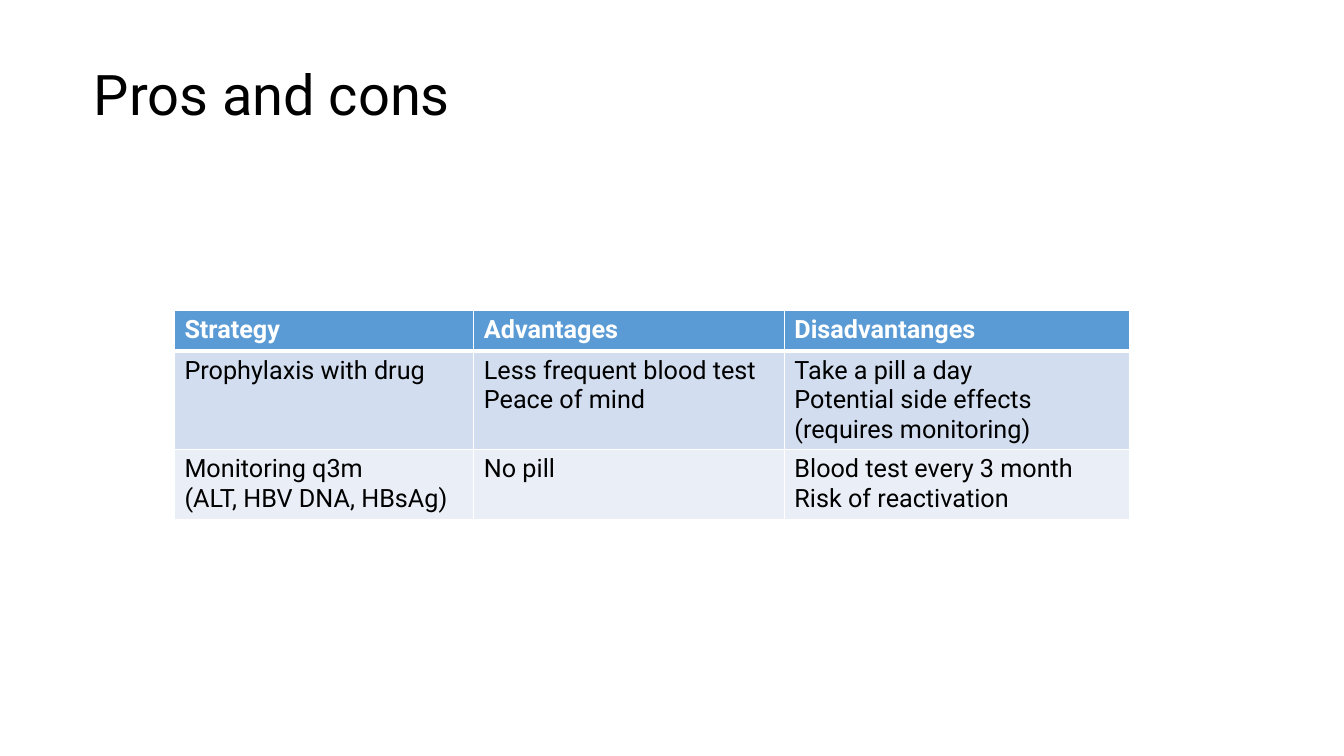
"""Build a slide that weighs prophylaxis against monitoring."""
from dataclasses import dataclass

import lxml.etree
import pptx
import pptx.dml.color
import pptx.enum.text
import pptx.oxml.ns
import pptx.util

HEADING = "Pros and cons"
STRATEGIES = [
    ("Strategy", "Advantages", "Disadvantanges"),
    (
        "Prophylaxis with drug",
        "Less frequent blood test\nPeace of mind",
        "Take a pill a day\nPotential side effects (requires monitoring)",
    ),
    (
        "Monitoring q3m\n(ALT, HBV DNA, HBsAg)",
        "No pill",
        "Blood test every 3 month\nRisk of reactivation",
    ),
]
SLIDE_SIZE = (13.33, 7.5)
HEADING_BOX = (0.83, 0.62, 11.67, 0.9)
GRID_ORIGIN = (1.73, 3.08)
COLUMN_WIDTHS = (2.97, 3.08, 3.42)
ROW_HEIGHTS = (0.4, 0.98, 0.69)


@dataclass(frozen=True)
class Theme:
    """Fonts, colours and sizes of the slide."""
    font: str = "Roboto"
    heading_size: int = 40
    cell_size: int = 18
    text: str = "000000"
    header_text: str = "FFFFFF"
    border: str = "FFFFFF"
    row_fills: tuple = ("5B9BD5", "D2DEEF", "EAEFF7")
    thin: int = 1
    thick: int = 3


THEME = Theme()


def style(paragraph, size, colour, bold=False):
    """Set the font of a whole paragraph."""
    font = paragraph.font
    font.name, font.size, font.bold = THEME.font, pptx.util.Pt(size), bold
    font.color.rgb = pptx.dml.color.RGBColor.from_string(colour)


def add_border(cell, side, points):
    """Draw one side of a cell's border."""
    qn = pptx.oxml.ns.qn
    properties = cell._tc.get_or_add_tcPr()
    line = lxml.etree.SubElement(properties, qn(f"a:ln{side}"), w=str(pptx.util.Pt(points)))
    fill = lxml.etree.SubElement(line, qn("a:solidFill"))
    lxml.etree.SubElement(fill, qn("a:srgbClr"), val=THEME.border)


def add_heading(slide):
    """Place and format the slide title."""
    title = slide.shapes.title
    title.left, title.top, title.width, title.height = map(pptx.util.Inches, HEADING_BOX)
    frame = title.text_frame
    frame.text = HEADING
    frame.word_wrap = True
    frame.auto_size = pptx.enum.text.MSO_AUTO_SIZE.NONE
    frame.vertical_anchor = pptx.enum.text.MSO_ANCHOR.TOP
    paragraph = frame.paragraphs[0]
    paragraph.alignment = pptx.enum.text.PP_ALIGN.LEFT
    paragraph.line_spacing = 0.9
    paragraph.space_before = pptx.util.Pt(10)
    style(paragraph, THEME.heading_size, THEME.text)


def fill_cell(cell, text, row):
    """Write and format one cell of the comparison."""
    header = row == 0
    for side in "LRTB":
        meets_header = (row, side) in ((0, "B"), (1, "T"))
        add_border(cell, side, THEME.thick if meets_header else THEME.thin)
    cell.fill.solid()
    cell.fill.fore_color.rgb = pptx.dml.color.RGBColor.from_string(THEME.row_fills[row])
    cell.text = text
    for paragraph in cell.text_frame.paragraphs:
        style(paragraph, THEME.cell_size, THEME.header_text if header else THEME.text, header)


def add_comparison(slide):
    """Lay out the strategies as a table."""
    bounds = (*GRID_ORIGIN, sum(COLUMN_WIDTHS), sum(ROW_HEIGHTS))
    table = slide.shapes.add_table(
        len(ROW_HEIGHTS), len(COLUMN_WIDTHS), *map(pptx.util.Inches, bounds)
    ).table
    for column, width in zip(table.columns, COLUMN_WIDTHS):
        column.width = pptx.util.Inches(width)
    for row, height in zip(table.rows, ROW_HEIGHTS):
        row.height = pptx.util.Inches(height)
    for row, strategy in enumerate(STRATEGIES):
        for column, text in enumerate(strategy):
            fill_cell(table.cell(row, column), text, row)


def main():
    """Create and save the presentation."""
    presentation = pptx.Presentation()
    presentation.slide_width, presentation.slide_height = map(pptx.util.Inches, SLIDE_SIZE)
    slide = presentation.slides.add_slide(presentation.slide_layouts.get_by_name("Title Only"))
    add_heading(slide)
    add_comparison(slide)
    presentation.save("out.pptx")


if __name__ == "__main__":
    main()
